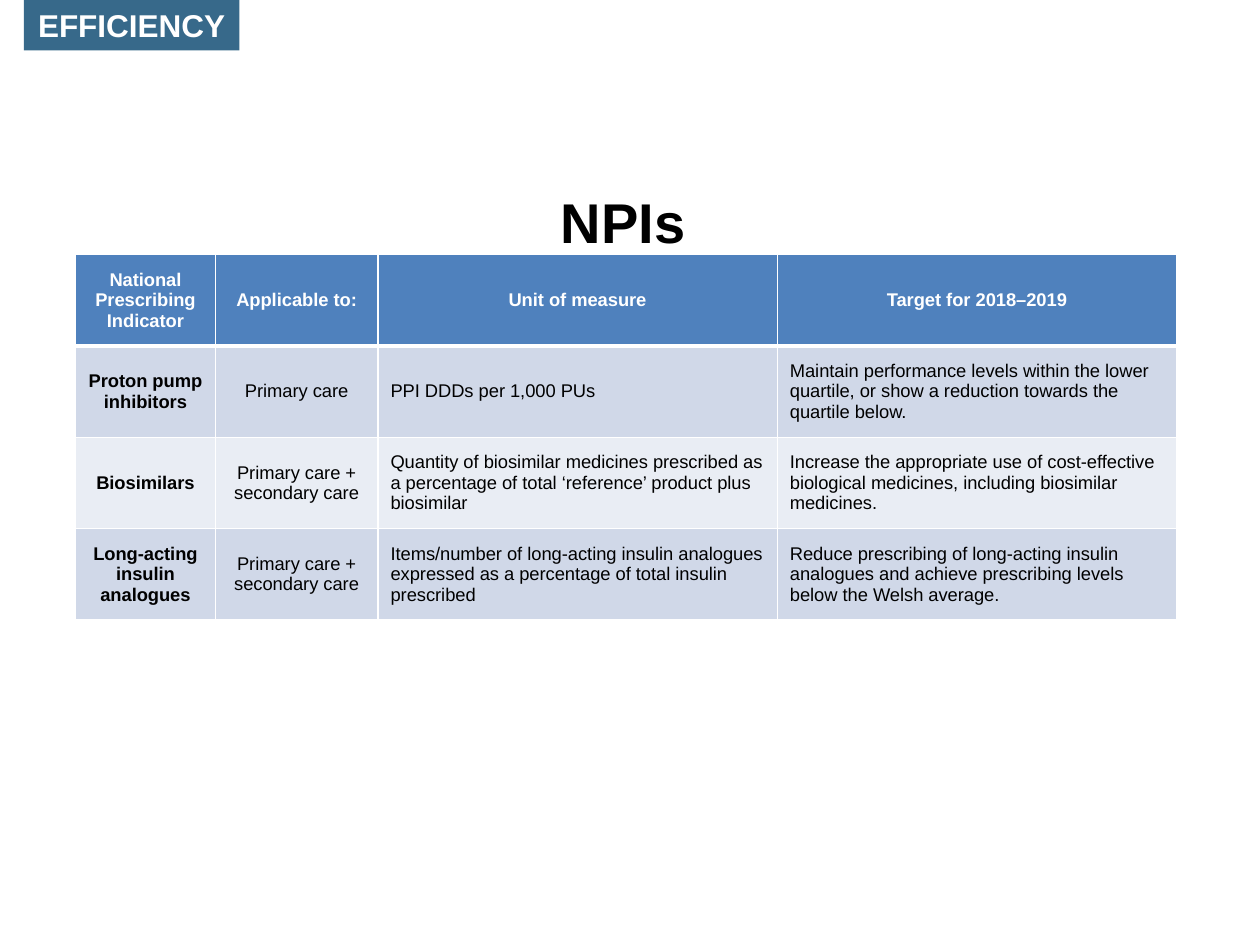
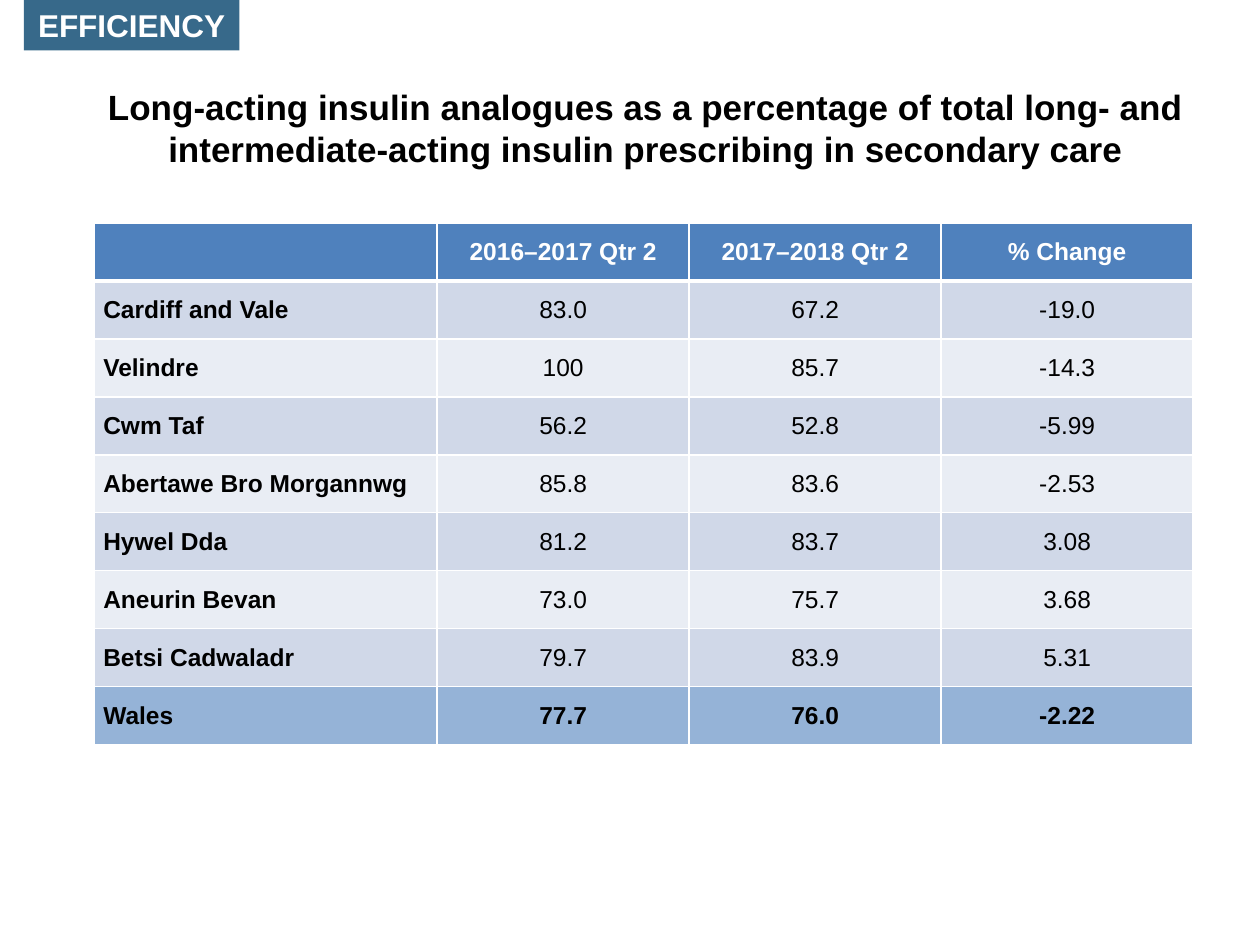
from lxml import etree
from pptx import Presentation
from pptx.dml.color import RGBColor
from pptx.enum.shapes import MSO_SHAPE as Shape
from pptx.enum.text import MSO_ANCHOR as Anchor, MSO_AUTO_SIZE as Fit, PP_ALIGN as Align
from pptx.oxml.ns import qn
from pptx.util import Inches, Pt

# Shared look
FONT = "Arial"
BLACK, WHITE = "000000", "FFFFFF"
TAG, HEAD, TOTAL = "37698A", "4F81BD", "95B3D7"
BANDS = ("D0D8E8", "E9EDF4")

NPIS = [
    ("National Prescribing Indicator", "Applicable to:", "Unit of measure",
     "Target for 2018–2019"),
    ("Proton pump inhibitors", "Primary care", "PPI DDDs per 1,000 PUs",
     "Maintain performance levels within the lower quartile, or show a "
     "reduction towards the quartile below."),
    ("Biosimilars", "Primary care + secondary care",
     "Quantity of biosimilar medicines prescribed as a percentage of total "
     "‘reference’ product plus biosimilar",
     "Increase the appropriate use of cost-effective biological medicines, "
     "including biosimilar medicines."),
    ("Long-acting insulin analogues", "Primary care + secondary care",
     "Items/number of long-acting insulin analogues expressed as a "
     "percentage of total insulin prescribed",
     "Reduce prescribing of long-acting insulin analogues and achieve "
     "prescribing levels below the Welsh average."),
]
INSULIN = [
    ("", "2016–2017 Qtr 2", "2017–2018 Qtr 2", "% Change"),
    ("Cardiff and Vale", "83.0", "67.2", "-19.0"),
    ("Velindre", "100", "85.7", "-14.3"),
    ("Cwm Taf", "56.2", "52.8", "-5.99"),
    ("Abertawe Bro Morgannwg", "85.8", "83.6", "-2.53"),
    ("Hywel Dda", "81.2", "83.7", "3.08"),
    ("Aneurin Bevan", "73.0", "75.7", "3.68"),
    ("Betsi Cadwaladr", "79.7", "83.9", "5.31"),
    ("Wales", "77.7", "76.0", "-2.22"),
]


def rgb(code):
    return RGBColor.from_string(code)


def style(para, size, color, bold=True, align=Align.CENTER):
    para.alignment = align
    font = para.font
    font.name, font.size, font.bold = FONT, Pt(size), bold
    font.color.rgb = rgb(color)


def add_title(slide, box, text, size):
    title = slide.shapes.title
    title.left, title.top, title.width, title.height = map(Inches, box)
    frame = title.text_frame
    frame.text = text
    frame.auto_size = Fit.NONE
    frame.vertical_anchor = Anchor.MIDDLE
    style(frame.paragraphs[0], size, BLACK)


def add_tag(slide, box, text):
    tag = slide.shapes.add_shape(Shape.RECTANGLE, *map(Inches, box))
    tag.shadow.inherit = False
    tag.fill.solid()
    tag.fill.fore_color.rgb = rgb(TAG)
    tag.line.fill.background()
    tag.text_frame.text = text
    tag.text_frame.word_wrap = False
    style(tag.text_frame.paragraphs[0], 18, WHITE)


def add_edges(cell, row):
    """White cell borders, thick between the header and the body."""
    thick = {0: "lnB", 1: "lnT"}.get(row)
    props = cell._tc.get_or_add_tcPr()
    for side in ("lnL", "lnR", "lnT", "lnB"):
        width = Pt(3 if side == thick else 1)
        line = etree.SubElement(props, qn(f"a:{side}"), w=str(width))
        fill = etree.SubElement(line, qn("a:solidFill"))
        etree.SubElement(fill, qn("a:srgbClr"), val=WHITE)


def add_grid(slide, spot, cols, high, rows, size, pads, left, total=False):
    """pads: side inset of the label column, of the rest, and top inset.
    left: body columns set flush left."""
    box = (*spot, sum(cols), high * len(rows))
    grid = slide.shapes.add_table(len(rows), len(cols), *map(Inches, box)).table
    for col, width in zip(grid.columns, cols):
        col.width = Inches(width)
    label, rest, top = map(Inches, pads)
    for r, words in enumerate(rows):
        grid.rows[r].height = Inches(high)
        head, last = r == 0, total and r == len(rows) - 1
        shade = HEAD if head else TOTAL if last else BANDS[(r - 1) % 2]
        for c, text in enumerate(words):
            cell = grid.cell(r, c)
            add_edges(cell, r)
            cell.fill.solid()
            cell.fill.fore_color.rgb = rgb(shade)
            cell.vertical_anchor = Anchor.MIDDLE
            cell.margin_left = cell.margin_right = label if c == 0 else rest
            cell.margin_top = cell.margin_bottom = top
            cell.text = text
            flush = not head and c in left
            style(cell.text_frame.paragraphs[0], size,
                  WHITE if head else BLACK, head or last or c == 0,
                  Align.LEFT if flush else Align.CENTER)


def add_page(deck, box, title, points, **grid):
    slide = deck.slides.add_slide(deck.slide_layouts.get_by_name("Title Only"))
    add_title(slide, box, title, points)
    add_grid(slide, **grid)
    add_tag(slide, (0.19, 0, 1.71, 0.4), "EFFICIENCY")


def main():
    deck = Presentation()
    deck.slide_width, deck.slide_height = Inches(10), Inches(7.5)

    # Indicators and targets
    add_page(deck, (0.57, 1.34, 8.75, 0.83), "NPIs", 32,
             spot=(0.6, 2.02), cols=(1.11, 1.29, 3.17, 3.17), high=0.72,
             rows=NPIS, size=10.5, pads=(0.07, 0.1, 0.12), left=(2, 3))

    # Insulin prescribing by health board
    add_page(deck, (0.75, 0.6, 8.75, 0.83),
             "Long-acting insulin analogues as a percentage of total long- and "
             "intermediate-acting insulin prescribing in secondary care", 20,
             spot=(0.75, 1.77), cols=(2.72, 2, 2, 2), high=0.46,
             rows=INSULIN, size=14, pads=(0.07, 0.07, 0.02), left=(0,),
             total=True)

    deck.save("out.pptx")


if __name__ == "__main__":
    main()
